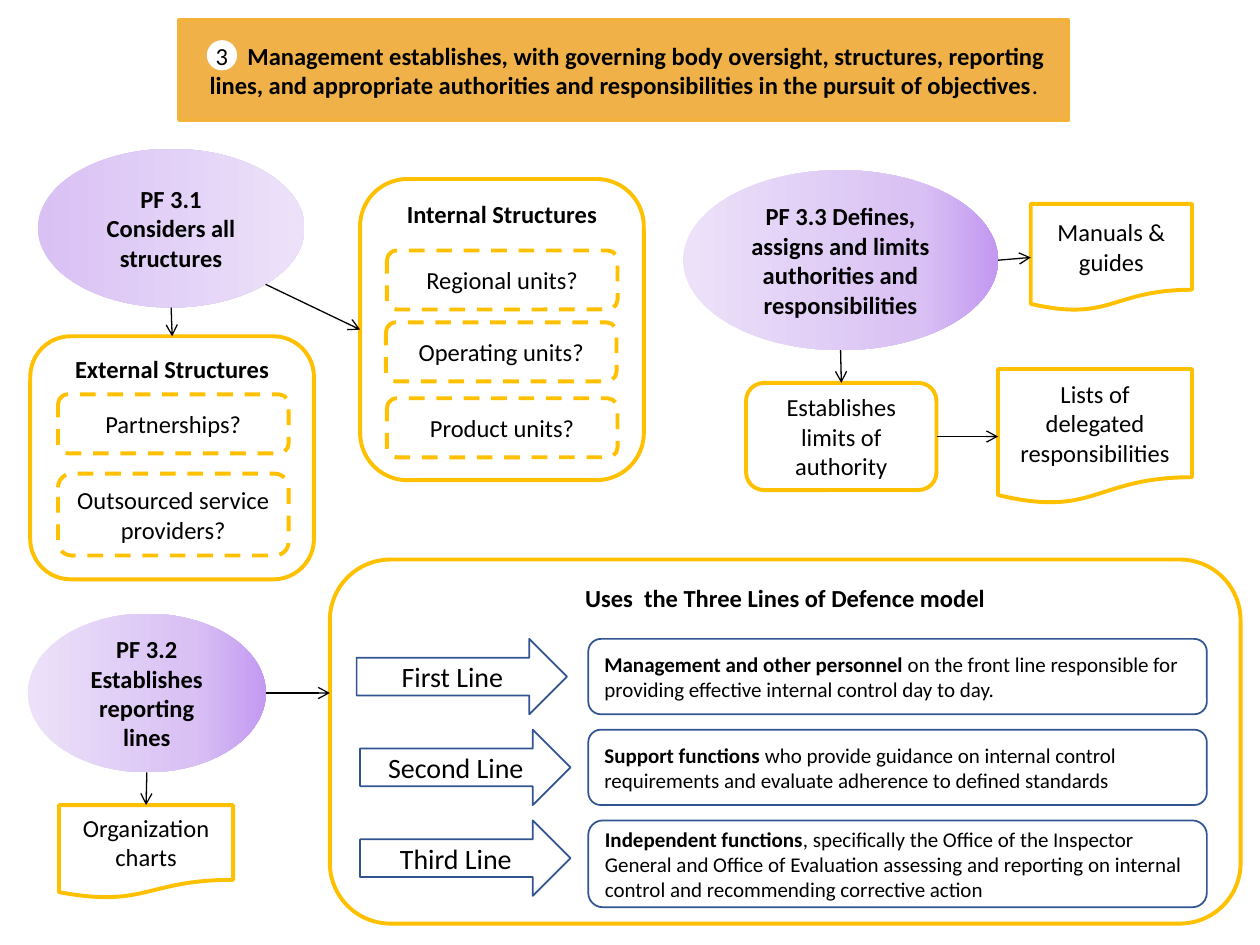
from lxml import etree
from pptx import Presentation, util as u
from pptx.dml.color import RGBColor
from pptx.enum import dml, shapes, text
from pptx.oxml.ns import qn

KIND = shapes.MSO_SHAPE
BLACK, WHITE, GOLD, NAVY = "000000", "FFFFFF", "FFC000", "325491"
PALE, LILAC, VIOLET = "ECE1F9", "D9C1F4", "C49AF1"

HEADER = [
    ("Management establishes, with governing body oversight, structures, reporting lines, "
     "and appropriate authorities and responsibilities in the pursuit of objectives", True),
    (".", False),
]
TOPICS = {
    "structures": ("PF 3.1 Considers all structures", (0.76, 3.0, 5.38, 3.2),
                   [(0, LILAC), (100, PALE)]),
    "reporting": ("PF 3.2 Establishes reporting lines", (0.56, 12.37, 4.8, 3.2),
                  [(0, PALE), (69, LILAC), (100, VIOLET)]),
    "authorities": ("PF 3.3 Defines, assigns and limits authorities and responsibilities",
                    (13.77, 3.43, 6.35, 3.63), [(0, PALE), (75, LILAC), (99, VIOLET)]),
}
PANELS = {
    "internal": ("Internal Structures", (7.26, 3.61, 5.72, 6.07)),
    "external": ("External Structures", (0.61, 6.78, 5.72, 4.9)),
    "defence": ("Uses  the Three Lines of Defence model", (6.65, 11.28, 18.36, 7.34)),
}
UNIT_WIDTH = 4.65
UNITS = [
    ("Regional units?", 7.8, 5.05, 1.19),
    ("Operating units?", 7.78, 6.5, 1.19),
    ("Product units?", 7.8, 8.03, 1.19),
    ("Partnerships?", 1.17, 7.95, 1.19),
    ("Outsourced service providers?", 1.17, 9.55, 1.65),
]
OUTPUTS = {
    "charts": ("Organization charts", KIND.FLOWCHART_DOCUMENT, (1.19, 16.23, 3.51, 1.88)),
    "limits": ("Establishes limits of authority", KIND.ROUNDED_RECTANGLE,
               (15.04, 7.72, 3.84, 2.16)),
    "lists": ("Lists of delegated responsibilities", KIND.FLOWCHART_DOCUMENT,
              (20.12, 7.44, 3.91, 2.72)),
    "manuals": ("Manuals & guides", KIND.FLOWCHART_DOCUMENT, (20.78, 4.11, 3.25, 2.16)),
}
DEFENCE_TOP, DEFENCE_STEP = 12.88, 1.83
DEFENCE_LINES = [
    ("First Line", 7.19, 1.52, "Management and other personnel",
     " on the front line responsible for providing effective internal control day to day."),
    ("Second Line", 7.26, 1.52, "Support functions",
     " who provide guidance on internal control requirements and evaluate adherence "
     "to defined standards"),
    ("Third Line", 7.26, 1.75, "Independent functions",
     ", specifically the Office of the Inspector General and Office of Evaluation assessing "
     "and reporting on internal control and recommending corrective action"),
]
TOP, LEFT = 0, 1
FLOWS = [
    ("structures", (0.5, 1), "external", TOP),
    ("structures", (0.854, 0.854), "internal", LEFT),
    ("reporting", (0.5, 1), "charts", TOP),
    ("authorities", (0.5, 1), "limits", TOP),
    ("authorities", (1, 0.5), "manuals", LEFT),
]

presentation = Presentation()
presentation.slide_width, presentation.slide_height = u.Cm(25.4), u.Cm(19.05)
slide = presentation.slides.add_slide(presentation.slide_layouts[6])


def color(value):
    return RGBColor.from_string(value)


def add_box(kind, box, fill=WHITE, line=GOLD, width=2.25, dashed=False):
    shape = slide.shapes.add_shape(kind, *map(u.Cm, box))
    shape.shadow.inherit = False
    if fill:
        shape.fill.solid()
        shape.fill.fore_color.rgb = color(fill)
    else:
        shape.fill.background()
    if line:
        shape.line.color.rgb = color(line)
        shape.line.width = u.Pt(width)
    else:
        shape.line.fill.background()
    if dashed:
        shape.line.dash_style = dml.MSO_LINE.DASH
    return shape


def write(shape, content, size=14, bold=False, align=text.PP_ALIGN.CENTER,
          anchor=text.MSO_ANCHOR.MIDDLE, indent=0):
    frame = shape.text_frame
    frame.word_wrap = True
    frame.vertical_anchor = anchor
    paragraph = frame.paragraphs[0]
    paragraph.alignment = align
    if indent:
        paragraph._p.get_or_add_pPr().set("indent", str(u.Cm(indent)))
    for words, strong in [(content, bold)] if isinstance(content, str) else content:
        run = paragraph.add_run()
        run.text = words
        run.font.name, run.font.size, run.font.bold = "Calibri", u.Pt(size), strong
        run.font.color.rgb = color(BLACK)


def shade(shape, stops):
    shape.fill.gradient()
    shape.fill.gradient_angle = 0
    stop_list = shape._element.spPr.find(".//" + qn("a:gsLst"))
    stop_list.clear()
    for position, value in stops:
        stop = etree.SubElement(stop_list, qn("a:gs"), pos=str(position * 1000))
        etree.SubElement(stop, qn("a:srgbClr"), val=value)


def add_arrow(start, end):
    arrow = slide.shapes.add_connector(shapes.MSO_CONNECTOR.STRAIGHT, *start, *end)
    arrow.line.color.rgb = color(BLACK)
    arrow.line.width = u.Pt(0.75)
    etree.SubElement(arrow.line._get_or_add_ln(), qn("a:tailEnd"), type="arrow")
    etree.SubElement(arrow._element.spPr, qn("a:effectLst"))
    return arrow


def point(shape, across, down):
    return int(shape.left + shape.width * across), int(shape.top + shape.height * down)


header = add_box(KIND.RECTANGLE, (3.61, 0.41, 17.93, 2.01), "F0B148", "F2B23B")
write(header, HEADER, indent=0.9)
badge = add_box(KIND.OVAL, (4.17, 0.81, 0.61, 0.61), line=None)
write(badge, "3")
frame = badge.text_frame
frame.margin_left = frame.margin_right = frame.margin_top = frame.margin_bottom = 0
frame.word_wrap = False

nodes = {}
for name, (label, box, stops) in TOPICS.items():
    nodes[name] = add_box(KIND.OVAL, box, line=None)
    shade(nodes[name], stops)
    write(nodes[name], label, bold=True)
for name, (label, box) in PANELS.items():
    nodes[name] = add_box(KIND.ROUNDED_RECTANGLE, box)
    write(nodes[name], label, bold=True, anchor=text.MSO_ANCHOR.TOP)
for label, left, top, height in UNITS:
    write(add_box(KIND.ROUNDED_RECTANGLE, (left, top, UNIT_WIDTH, height), dashed=True), label)
for name, (label, kind, box) in OUTPUTS.items():
    nodes[name] = add_box(kind, box)
    write(nodes[name], label)

for index, (label, left, height, lead, rest) in enumerate(DEFENCE_LINES):
    top = DEFENCE_TOP + index * DEFENCE_STEP
    pointer = add_box(KIND.RIGHT_ARROW, (left, top, 4.24, 1.52), None, NAVY, 1)
    write(pointer, label, size=16)
    duty = add_box(KIND.ROUNDED_RECTANGLE, (11.86, top, 12.47, height), None, NAVY, 1)
    write(duty, [(lead, True), (rest, False)], size=12, align=text.PP_ALIGN.LEFT)

for source, (across, down), target, side in FLOWS:
    start = point(nodes[source], across, down)
    add_arrow(start, start).end_connect(nodes[target], side)

limits_arrow = add_arrow((0, 0), (0, 0))
limits_arrow.begin_connect(nodes["limits"], 3)
limits_arrow.end_connect(nodes["lists"], LEFT)

reporting_edge = point(nodes["reporting"], 1, 0.5)
add_arrow(reporting_edge, (nodes["defence"].left, reporting_edge[1]))

presentation.save("out.pptx")
